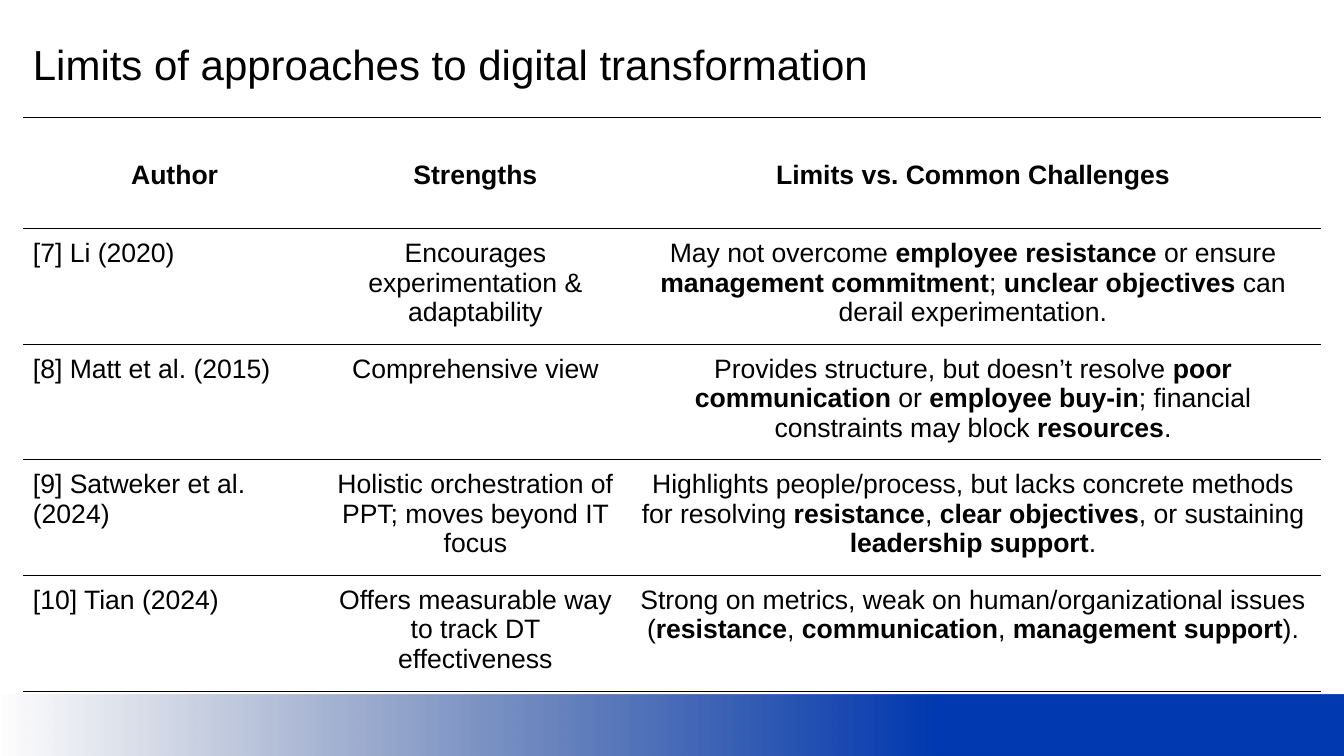
from lxml import etree
from pptx import Presentation
from pptx.dml.color import RGBColor
from pptx.enum import shapes, text
from pptx.oxml import ns
from pptx.util import Cm, Pt

BLACK = RGBColor(0x00, 0x00, 0x00)
NAVY = RGBColor(0x00, 0x21, 0x66)
BLUE = RGBColor(0x00, 0x39, 0xB1)
FONT = "Arial"
MARGIN = Cm(0.25)
LEFT, WIDTH = Cm(0.58), Cm(32.72)
COLUMN_WIDTHS = [Cm(7.64), Cm(7.52), Cm(17.56)]
ROW_HEIGHT = Cm(2.81)

# Text between asterisks is bold
ROWS = [
    ("*Author*", "*Strengths*", "*Limits vs. Common Challenges*"),
    ("[7] Li (2020)",
     "Encourages experimentation & adaptability",
     "May not overcome *employee resistance* or ensure *management commitment*; "
     "*unclear objectives* can derail experimentation."),
    ("[8] Matt et al. (2015)",
     "Comprehensive view",
     "Provides structure, but doesn’t resolve *poor communication* or "
     "*employee buy-in*; financial constraints may block *resources*."),
    ("[9] Satweker et al. (2024)",
     "Holistic orchestration of PPT; moves beyond IT focus",
     "Highlights people/process, but lacks concrete methods for resolving "
     "*resistance*, *clear objectives*, or sustaining *leadership support*."),
    ("[10] Tian (2024)",
     "Offers measurable way to track DT effectiveness",
     "Strong on metrics, weak on human/organizational issues "
     "(*resistance*, *communication*, *management support*)."),
]


def set_borders(cell):
    """Rule the top and bottom of a cell and leave its sides open."""
    tcPr = cell._tc.get_or_add_tcPr()
    for i, side in enumerate(("lnL", "lnR", "lnT", "lnB")):
        ln = etree.Element(ns.qn(f"a:{side}"), w=str(Pt(0.75)))
        if side in ("lnT", "lnB"):
            fill = etree.SubElement(ln, ns.qn("a:solidFill"))
            etree.SubElement(fill, ns.qn("a:srgbClr"), val=str(BLACK))
        else:
            etree.SubElement(ln, ns.qn("a:noFill"))
        tcPr.insert(i, ln)


prs = Presentation()
prs.slide_width, prs.slide_height = Cm(33.87), Cm(19.05)
s = prs.slides.add_slide(prs.slide_layouts[6])

# Footer band, fading in from the left
band = s.shapes.add_shape(shapes.MSO_SHAPE.RECTANGLE, 0, Cm(17.5), prs.slide_width, Cm(1.55))
band.shadow.inherit = False
band.line.fill.background()
band.fill.gradient()
band.fill.gradient_angle = 0
gsLst = band._element.spPr.find(ns.qn("a:gradFill")).find(ns.qn("a:gsLst"))
for gs in list(gsLst):
    gsLst.remove(gs)
for percent, color, opacity in ((0, NAVY, 0), (70, BLUE, 100), (100, BLUE, 100)):
    gs = etree.SubElement(gsLst, ns.qn("a:gs"), pos=str(percent * 1000))
    clr = etree.SubElement(gs, ns.qn("a:srgbClr"), val=str(color))
    etree.SubElement(clr, ns.qn("a:alpha"), val=str(opacity * 1000))

# Title
title = s.shapes.add_textbox(LEFT, Cm(0.71), WIDTH, Cm(16.15))
tf = title.text_frame
tf.word_wrap = True
tf.margin_left = tf.margin_right = tf.margin_top = tf.margin_bottom = MARGIN
p = tf.paragraphs[0]
p.text = "Limits of approaches to digital transformation"
p.font.name, p.font.size, p.font.color.rgb = FONT, Pt(30), BLACK

# Table of approaches
table = s.shapes.add_table(len(ROWS), len(COLUMN_WIDTHS), LEFT, Cm(2.95),
                           WIDTH, ROW_HEIGHT * len(ROWS)).table
table.first_row = table.horz_banding = False
for column, width in zip(table.columns, COLUMN_WIDTHS):
    column.width = width
for i, row in enumerate(ROWS):
    for j, wording in enumerate(row):
        cell = table.cell(i, j)
        cell.fill.background()
        set_borders(cell)
        cell.margin_left = cell.margin_right = MARGIN
        cell.margin_top = cell.margin_bottom = MARGIN
        p = cell.text_frame.paragraphs[0]
        p.font.name, p.font.size, p.font.color.rgb = FONT, Pt(19), BLACK
        if i == 0:
            cell.vertical_anchor = text.MSO_ANCHOR.MIDDLE
            p.line_spacing = 1.15
        if i == 0 or j > 0:
            p.alignment = text.PP_ALIGN.CENTER
        for k, part in enumerate(wording.split("*")):
            if part:
                r = p.add_run()
                r.text = part
                r.font.bold = k % 2 == 1

prs.save("out.pptx")
